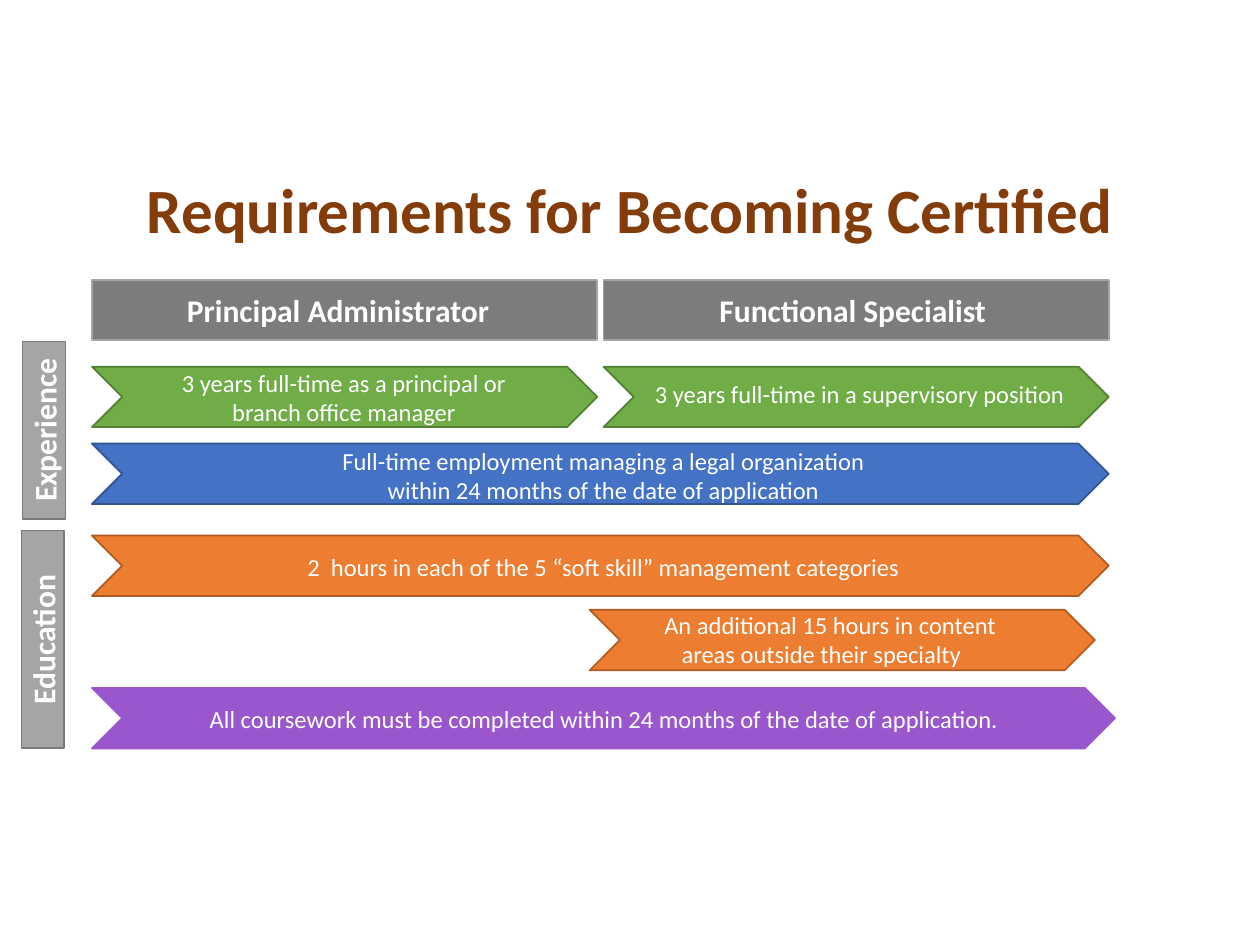
from dataclasses import dataclass

from pptx import Presentation
from pptx.dml.color import RGBColor
from pptx.enum.shapes import MSO_SHAPE
from pptx.enum.text import MSO_ANCHOR, PP_ALIGN
from pptx.util import Inches, Pt


@dataclass(frozen=True)
class Theme:
    font: str = "Calibri"
    title_size: int = 36
    heading_size: int = 18
    body_size: int = 14
    title: str = "843C0B"
    white: str = "FFFFFF"
    header: tuple = ("7C7C7C", "A5A5A5")
    sidebar: tuple = ("A5A5A5", "7A7A7A")
    green: tuple = ("70AD47", "538035")
    blue: tuple = ("4472C4", "325491")
    orange: tuple = ("ED7D31", "AF5C24")
    purple: tuple = ("9A57CD", "9A57CD")


@dataclass(frozen=True)
class Box:
    left: float
    top: float
    width: float
    height: float

    def inside(self, left, top, width, height):
        return Box(self.left + left, self.top + top, width, height)

    def lengths(self):
        return [Inches(value) for value in (self.left, self.top, self.width, self.height)]


THEME = Theme()
COLUMN_WIDTH = 4.01
COLUMN_STEP = 4.06
FULL_WIDTH = COLUMN_STEP + COLUMN_WIDTH
BAR_HEIGHT = 0.48


def write_text(frame, text, size=THEME.body_size, color=THEME.white, bold=False,
               align=PP_ALIGN.CENTER, anchor=MSO_ANCHOR.TOP, first_indent=0):
    frame.word_wrap = True
    frame.vertical_anchor = anchor
    for index, line in enumerate(text.split("\n")):
        para = frame.paragraphs[0] if index == 0 else frame.add_paragraph()
        para.alignment = align
        if first_indent and index == 0:
            para._p.get_or_add_pPr().set("marL", str(Inches(first_indent)))
        span = para.add_run()
        span.text = line
        span.font.name = THEME.font
        span.font.size = Pt(size)
        span.font.bold = bold
        span.font.color.rgb = RGBColor.from_string(color)


def add_panel(page, kind, box, colors):
    fill, line = colors
    panel = page.shapes.add_shape(kind, *box.lengths())
    panel.shadow.inherit = False
    panel.fill.solid()
    panel.fill.fore_color.rgb = RGBColor.from_string(fill)
    panel.line.color.rgb = RGBColor.from_string(line)
    panel.line.width = Pt(1)
    return panel


def add_heading(page, box, text, colors):
    panel = add_panel(page, MSO_SHAPE.RECTANGLE, box, colors)
    write_text(panel.text_frame, text, size=THEME.heading_size, bold=True,
               anchor=MSO_ANCHOR.MIDDLE)
    return panel


def add_arrow(page, box, colors, text, label_box, **text_format):
    add_panel(page, MSO_SHAPE.CHEVRON, box, colors)
    label = page.shapes.add_textbox(*label_box.lengths())
    write_text(label.text_frame, text, **text_format)


def place_title(page, box):
    title = page.shapes.title
    title.left, title.top, title.width, title.height = box.lengths()
    write_text(title.text_frame, "Requirements for Becoming Certified",
               size=THEME.title_size, color=THEME.title, bold=True)


def place_headers(page, box):
    headings = [("Principal Administrator", 0.2), ("Functional Specialist", 0.15)]
    for column, (text, right_margin) in enumerate(headings):
        cell = box.inside(column * COLUMN_STEP, 0, COLUMN_WIDTH, box.height)
        panel = add_heading(page, cell, text, THEME.header)
        panel.text_frame.margin_right = Inches(right_margin)


def place_sidebar(page, box, text):
    panel = add_heading(page, box, text, THEME.sidebar)
    panel.text_frame._txBody.bodyPr.set("vert", "vert270")


def place_experience(page, box):
    add_arrow(page, box.inside(0, 0, COLUMN_WIDTH, BAR_HEIGHT), THEME.green,
              "3 years full-time as a principal or\nbranch office manager",
              box.inside(0.06, -0.04, 3.88, 0.57))
    add_arrow(page, box.inside(COLUMN_STEP, 0, COLUMN_WIDTH, BAR_HEIGHT), THEME.green,
              "3 years full-time in a supervisory position",
              box.inside(4.37, 0.05, 4, 0.34), align=PP_ALIGN.LEFT)
    add_arrow(page, box.inside(0, 0.61, box.width, BAR_HEIGHT), THEME.blue,
              "Full-time employment managing a legal organization "
              "within 24 months of the date of application",
              box.inside(1.75, 0.58, 4.62, 0.57))


def place_education(page, box):
    add_arrow(page, box.inside(0, 0, box.width, BAR_HEIGHT), THEME.orange,
              "2  hours in each of the 5 “soft skill” management categories",
              box.inside(1.56, 0.08, 5, 0.34))
    add_arrow(page, box.inside(3.95, 0.59, COLUMN_WIDTH, BAR_HEIGHT), THEME.orange,
              "An additional 15 hours in content\nareas outside their specialty",
              box.inside(4.04, 0.54, 3.5, 0.57), first_indent=0.14)
    add_arrow(page, box.inside(0, 1.21, box.width + 0.05, BAR_HEIGHT), THEME.purple,
              "All coursework must be completed within 24 months of the date of application.",
              box.inside(0.19, 1.29, 7.75, 0.34))


def main():
    deck = Presentation()
    deck.slide_width, deck.slide_height = Inches(10), Inches(7.5)
    page = deck.slides.add_slide(deck.slide_layouts[5])
    place_title(page, Box(0, 1.3, 10, 0.71))
    place_headers(page, Box(0.73, 2.22, FULL_WIDTH, BAR_HEIGHT))
    place_experience(page, Box(0.73, 2.91, FULL_WIDTH, 1.09))
    place_education(page, Box(0.73, 4.25, FULL_WIDTH, 1.69))
    place_sidebar(page, Box(0.18, 2.71, 0.34, 1.41), "Experience")
    place_sidebar(page, Box(0.17, 4.21, 0.34, 1.73), "Education")
    deck.save("out.pptx")


if __name__ == "__main__":
    main()
